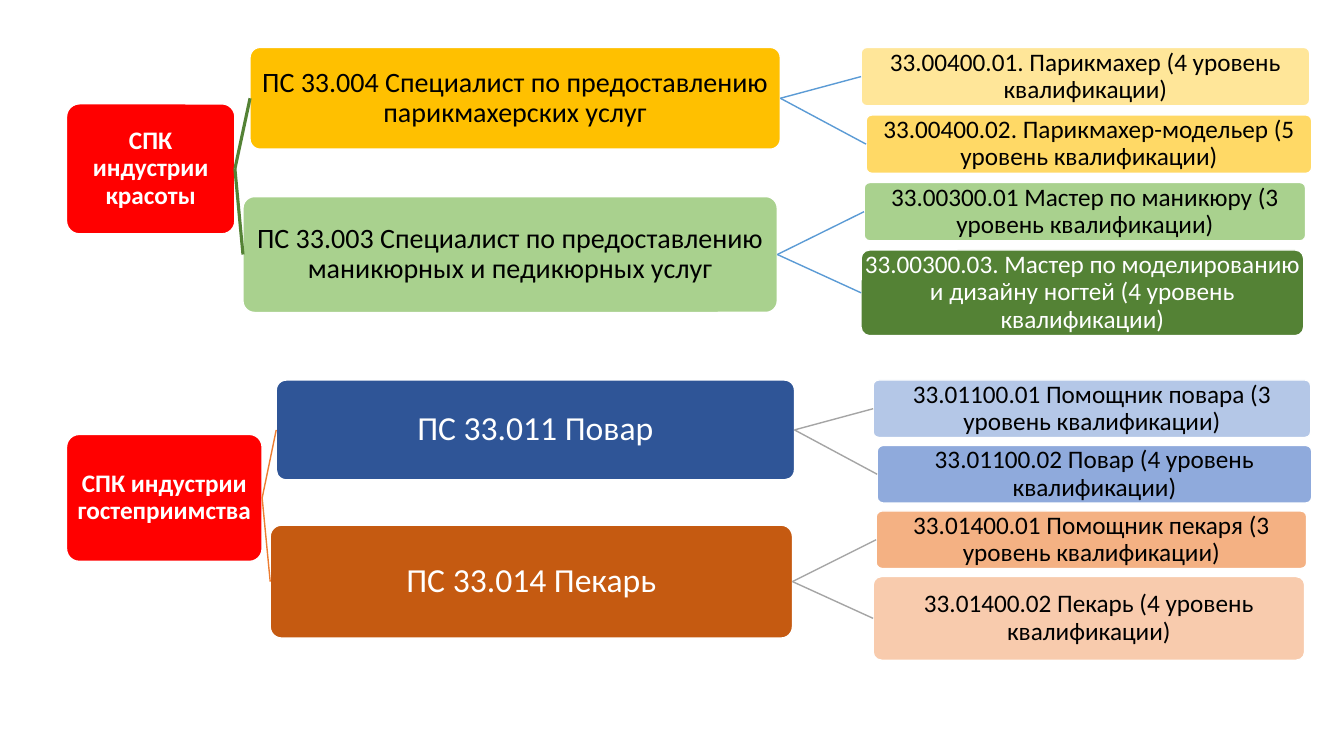
from pptx import Presentation, util as u
from pptx.dml.color import RGBColor
from pptx.enum import shapes, text
from pptx.oxml.ns import qn
from lxml import etree

WHITE, BLACK = "FFFFFF", "000000"


def paint(color, code):
    color.rgb = RGBColor.from_string(code)


def add_box(words, place, fill, ink, size, bold=False):
    box = slide.shapes.add_shape(
        shapes.MSO_SHAPE.ROUNDED_RECTANGLE, *[u.Inches(n) for n in place])
    box.adjustments[0] = 0.1
    box.shadow.inherit = False
    box.fill.solid()
    paint(box.fill.fore_color, fill)
    paint(box.line.color, WHITE)
    box.line.width = u.Pt(1)
    frame = box.text_frame
    frame.word_wrap = True
    frame.vertical_anchor = text.MSO_ANCHOR.MIDDLE
    inset = u.Inches(0.02 if size > 20 else 0.01)
    frame.margin_left = frame.margin_right = inset
    frame.margin_top = frame.margin_bottom = inset
    frame.text = words
    par = frame.paragraphs[0]
    par.alignment = text.PP_ALIGN.CENTER
    par.line_spacing = 0.9
    font = par.runs[0].font
    font.name, font.size, font.bold = "Calibri", u.Pt(size), bold
    paint(font.color, ink)
    return box


def join(start, end, code, width):
    line = slide.shapes.add_connector(shapes.MSO_CONNECTOR.STRAIGHT, 0, 0, 0, 0)
    line.begin_connect(start, 3)
    line.end_connect(end, 1)
    paint(line.line.color, code)
    line.line.width = u.Pt(width)
    etree.SubElement(line._element.spPr, qn("a:effectLst"))


# Each tree: council, its line, leaf line colour, standards
# Each standard: words, place, fill, ink, size, qualifications
trees = [
    ("СПК индустрии красоты", (0.66, 1.03, 1.67, 1.29), "548235", 2.25, "5B9BD5", [
        ("ПС 33.004 Специалист по предоставлению парикмахерских услуг",
         (2.48, 0.47, 5.26, 1.01), "FFC000", BLACK, 20, [
             ("33.00400.01. Парикмахер (4 уровень квалификации)",
              (8.54, 0.47, 4.45, 0.58), "FFE699", BLACK),
             ("33.00400.02. Парикмахер-модельер (5 уровень квалификации)",
              (8.59, 1.14, 4.42, 0.58), "FFD966", BLACK)]),
        ("ПС 33.003 Специалист по предоставлению маникюрных и педикюрных услуг",
         (2.41, 1.95, 5.3, 1.15), "A9D18E", BLACK, 20, [
             ("33.00300.01 Мастер по маникюру (3 уровень квалификации)",
              (8.57, 1.81, 4.38, 0.58), "A9D18E", BLACK),
             ("33.00300.03. Мастер по моделированию и дизайну ногтей (4 уровень квалификации)",
              (8.54, 2.48, 4.39, 0.85), "548235", WHITE)])]),
    ("СПК индустрии гостеприимства", (0.66, 4.31, 1.94, 1.26), "ED7D31", 1, "A5A5A5", [
        ("ПС 33.011 Повар", (2.74, 3.77, 5.14, 0.99), "2F5597", WHITE, 24, [
            ("33.01100.01 Помощник повара (3 уровень квалификации)",
             (8.66, 3.77, 4.34, 0.57), "B4C7E7", BLACK),
            ("33.01100.02 Повар (4 уровень квалификации)",
             (8.7, 4.42, 4.31, 0.57), "8FAADC", BLACK)]),
        ("ПС 33.014 Пекарь", (2.68, 5.21, 5.18, 1.12), "C55A11", WHITE, 24, [
            ("33.01400.01 Помощник пекаря (3 уровень квалификации)",
             (8.69, 5.07, 4.27, 0.57), "F4B183", BLACK),
            ("33.01400.02 Пекарь (4 уровень квалификации)",
             (8.66, 5.72, 4.28, 0.83), "F8CBAD", BLACK)])]),
]

# Blank wide slide
deck = Presentation()
deck.slide_width, deck.slide_height = u.Inches(13.33), u.Inches(7.5)
slide = deck.slides.add_slide(deck.slide_layouts[6])

# Boxes and the lines between levels
for name, place, stem, width, twig, norms in trees:
    root = add_box(name, place, "FF0000", WHITE, 18, True)
    for *norm, grades in norms:
        branch = add_box(*norm)
        join(root, branch, stem, width)
        for grade in grades:
            leaf = add_box(*grade, 18)
            join(branch, leaf, twig, 1)

deck.save("out.pptx")
